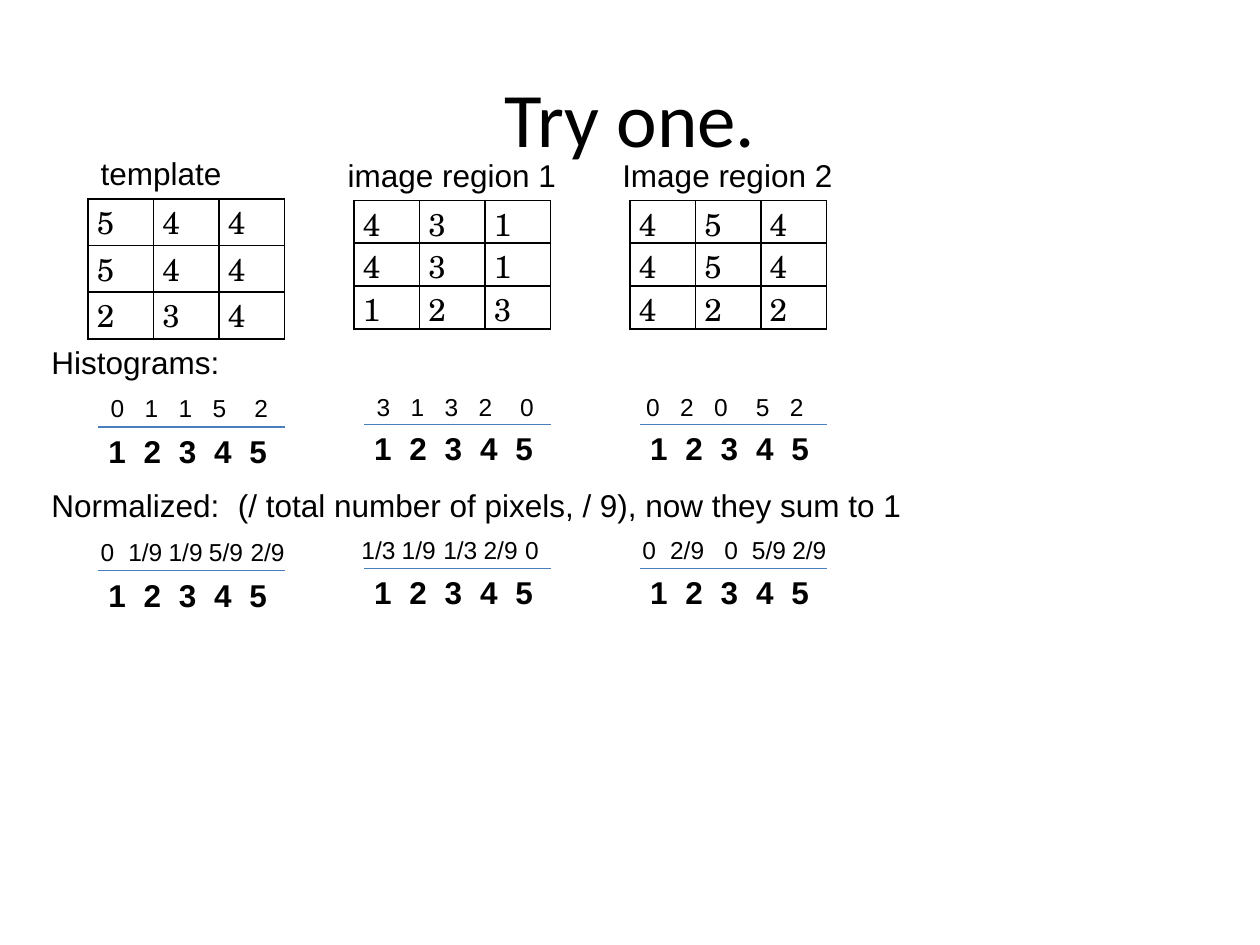
from dataclasses import dataclass

from lxml import etree
from pptx import Presentation
from pptx.dml.color import RGBColor
from pptx.enum.shapes import MSO_CONNECTOR
from pptx.enum.text import MSO_ANCHOR, MSO_AUTO_SIZE, PP_ALIGN
from pptx.oxml.ns import qn
from pptx.util import Inches, Pt

STRAIGHT = MSO_CONNECTOR.STRAIGHT
MIDDLE = MSO_ANCHOR.MIDDLE
FIT_SHAPE = MSO_AUTO_SIZE.SHAPE_TO_FIT_TEXT
CENTER, JUSTIFY = PP_ALIGN.CENTER, PP_ALIGN.JUSTIFY


@dataclass(frozen=True)
class Theme:
    ink: RGBColor = RGBColor(0x00, 0x00, 0x00)
    axis: RGBColor = RGBColor(0x4B, 0x7E, 0xBC)
    title: Pt = Pt(44)
    body: Pt = Pt(18)
    count: Pt = Pt(14)
    axis_width: Pt = Pt(0.75)
    border_width: Pt = Pt(1)


theme = Theme()
TITLE = {"name": "Calibri", "size": theme.title}
BODY = {"name": "Arial", "size": theme.body}
BINS = {**BODY, "bold": True}
COUNTS = {"name": "Arial", "size": theme.count}
PIXELS = {"name": "TeX Gyre Schola", "size": theme.body}


def write(paragraph, words, font_format):
    run = paragraph.add_run()
    run.text = words
    run.font.color.rgb = theme.ink
    for attribute, value in font_format.items():
        setattr(run.font, attribute, value)


def add_text(words, left, top, width, height, font_format, stops=(), inset=0.1):
    """Add a text box; stops are tab positions in inches from the text edge."""
    shape = slide.shapes.add_textbox(
        Inches(left), Inches(top), Inches(width), Inches(height))
    frame = shape.text_frame
    frame.word_wrap = True
    frame.margin_left = Inches(inset)
    frame.margin_right = 0
    paragraph = frame.paragraphs[0]
    write(paragraph, words, font_format)
    if stops:
        properties = paragraph._p.get_or_add_pPr()
        tabs = etree.SubElement(properties, qn("a:tabLst"))
        for stop in stops:
            etree.SubElement(tabs, qn("a:tab"), pos=str(Inches(stop)), algn="l")
    return shape


presentation = Presentation()
presentation.slide_width = Inches(10)
presentation.slide_height = Inches(7.5)
slide = presentation.slides.add_slide(presentation.slide_layouts[6])

title = add_text("Try one.", 0.5, 0.3, 9, 1.25, TITLE)
title.text_frame.margin_right = Inches(0.1)
title.text_frame.vertical_anchor = MIDDLE
title.text_frame.paragraphs[0].alignment = CENTER

# Pixel grids: label, label left, top, width, grid left, top, row height, pixels
CELL = 0.52
grids = [
    ("template", 0.7, 1.17, 1.56, 0.7, 1.58, 0.37, ["544", "544", "234"]),
    ("image region 1", 2.66, 1.19, 1.88, 2.81, 1.59, 0.34, ["431", "431", "123"]),
    ("Image region 2", 4.84, 1.19, 1.95, 5, 1.59, 0.34, ["454", "454", "422"]),
]
for label, label_left, label_top, label_width, left, top, row_height, pixels in grids:
    table = slide.shapes.add_table(
        3, 3, Inches(left), Inches(top), Inches(3 * CELL), Inches(3 * row_height)).table
    table.first_row = table.horz_banding = False
    for column in table.columns:
        column.width = Inches(CELL)
    for row, row_pixels in zip(table.rows, pixels):
        row.height = Inches(row_height)
        for cell, pixel in zip(row.cells, row_pixels):
            cell.margin_left = cell.margin_right = Inches(0.07)
            cell.margin_top = cell.margin_bottom = 0
            paragraph = cell.text_frame.paragraphs[0]
            paragraph.alignment = JUSTIFY
            write(paragraph, pixel, PIXELS)
            properties = cell._tc.get_or_add_tcPr()
            for side in ("a:lnL", "a:lnR", "a:lnT", "a:lnB"):
                border = etree.SubElement(
                    properties, qn(side), w=str(theme.border_width))
                fill = etree.SubElement(border, qn("a:solidFill"))
                etree.SubElement(fill, qn("a:srgbClr"), val=str(theme.ink))
            cell.fill.background()
    add_text(label, label_left, label_top, label_width, 0.4, BODY)

# Histograms: counts, left, width and tab stops under each grid
even = (0.27, 0.54, 0.81, 1.14)
sections = [
    ("Histograms:", 1.55, (), 2.67, [
        ("0 1 1 5 2", 0.78, 1.45, even),
        ("3 1 3 2 0", 2.89, 1.45, even),
        ("0 2 0 5 2", 5.03, 1.51, (0.27, 0.54, 0.87, 1.14)),
    ]),
    ("Normalized:\t(/ total number of pixels, / 9), now they sum to 1",
     7, (1.48,), 3.81, [
         ("0 1/9 1/9 5/9 2/9", 0.7, 1.67, (0.22, 0.54, 0.86, 1.19)),
         ("1/3 1/9 1/3 2/9 0", 2.77, 1.67, (0.32, 0.65, 0.97, 1.3)),
         ("0 2/9 0 5/9 2/9", 5, 1.67, (0.22, 0.65, 0.87, 1.19)),
     ]),
]
bin_stops = [0.28 * step for step in range(1, 5)]
for heading, heading_width, heading_stops, top, histograms in sections:
    add_text(heading, 0.31, top, heading_width, 0.4, BODY, heading_stops)
    for grid, (counts, count_left, count_width, stops) in zip(grids, histograms):
        left = grid[4]
        drop = 0.02 if left == 0.7 else 0
        axis_top = Inches(top + 0.7 + drop)
        add_text("\t".join("12345"), left - 0.08, top + 0.69 + drop, 1.6, 0.4,
                 BINS, bin_stops, inset=0.24)
        axis = slide.shapes.add_connector(
            STRAIGHT, Inches(left + 0.08), axis_top, Inches(left + 1.56), axis_top)
        axis.line.color.rgb = theme.axis
        axis.line.width = theme.axis_width
        etree.SubElement(axis._element.spPr, qn("a:effectLst"))
        add_text(counts.replace(" ", "\t"), count_left, top + 0.39 + drop / 2,
                 count_width, 0.34, COUNTS, stops)

for shape in slide.shapes:
    if shape.has_text_frame and shape.shape_id != title.shape_id:
        shape.text_frame.auto_size = FIT_SHAPE

presentation.save("out.pptx")
